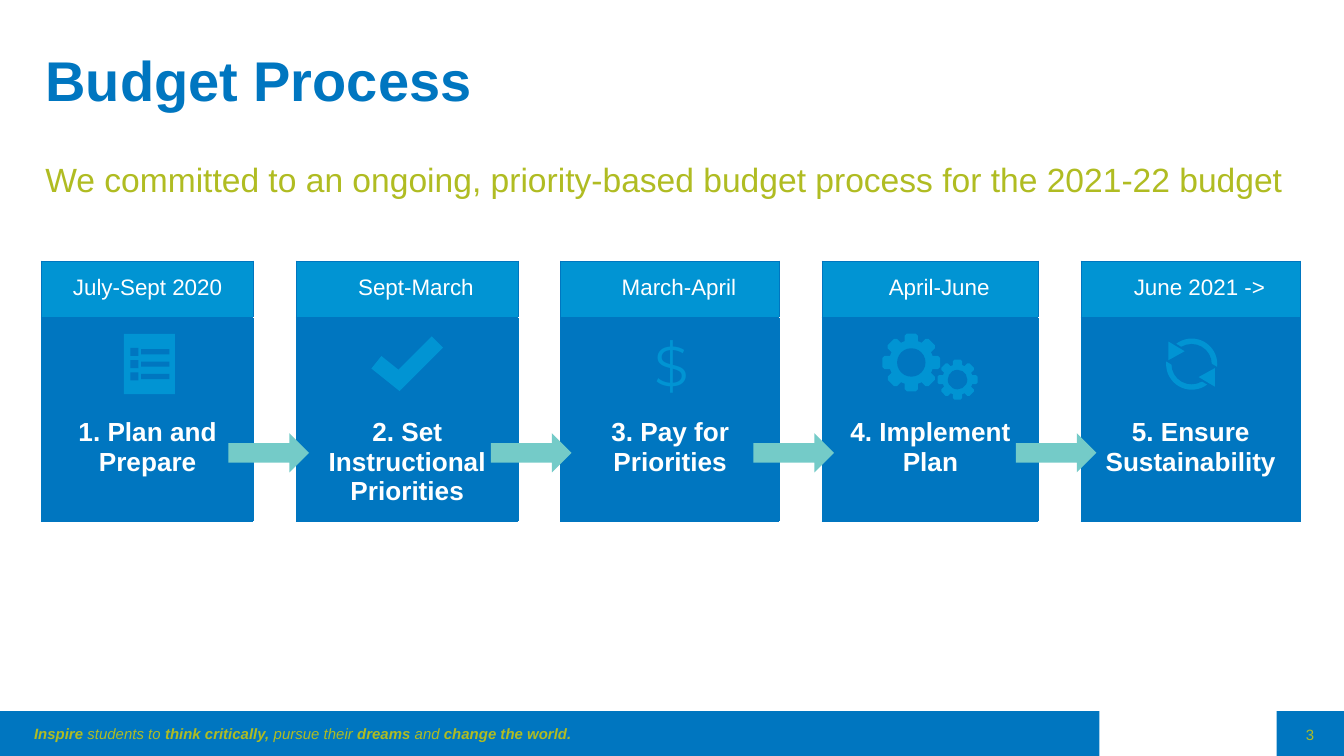
from lxml import etree
from math import cos, radians, sin

from pptx import Presentation
from pptx.dml.color import RGBColor
from pptx.enum.shapes import MSO_SHAPE as Shape
from pptx.enum.text import MSO_ANCHOR as Anchor, MSO_AUTO_SIZE as AutoSize, PP_ALIGN as Align
from pptx.oxml import parse_xml
from pptx.oxml.ns import nsdecls
from pptx.util import Pt

BLUE = RGBColor(0x00, 0x76, 0xC0)
SKY = RGBColor(0x01, 0x94, 0xD3)
LIME = RGBColor(0xB0, 0xBC, 0x22)
TEAL = RGBColor(0x74, 0xCB, 0xC8)
WHITE = RGBColor(0xFF, 0xFF, 0xFF)
INSET = 7.2


def add_shape(shapes, kind, x, y, w, h, color, rotation=0):
    """Add a borderless filled shape centred on x, y."""
    sp = shapes.add_shape(kind, Pt(x - w / 2), Pt(y - h / 2), Pt(w), Pt(h))
    sp.shadow.inherit = False
    sp.fill.solid()
    sp.fill.fore_color.rgb = color
    sp.line.fill.background()
    sp.rotation = rotation
    return sp


def format_text(sp, box, size, color, font="Arial", anchor=Anchor.TOP, align=Align.LEFT):
    """Place a text shape and set its frame and paragraph format."""
    sp.left, sp.top, sp.width, sp.height = (Pt(v) for v in box)
    tf = sp.text_frame
    tf.word_wrap = True
    tf.auto_size = AutoSize.NONE
    tf.vertical_anchor = anchor
    tf.margin_left = tf.margin_right = tf.margin_top = tf.margin_bottom = Pt(INSET)
    p = tf.paragraphs[0]
    p.alignment = align
    p.font.size = Pt(size)
    p.font.name = font
    p.font.color.rgb = color
    return p


prs = Presentation()
prs.slide_width, prs.slide_height = Pt(720), Pt(405)
s = prs.slides.add_slide(prs.slide_layouts[5])
shapes = s.shapes

# Footer
add_shape(shapes, Shape.RECTANGLE, 360, 393, 720, 24, BLUE)
add_shape(shapes, Shape.RECTANGLE, 636.5, 380, 95, 50, WHITE)
sp = shapes.add_textbox(0, 0, 0, 0)
p = format_text(sp, (11.2, 381, 335.5, 18), 8, LIME)
p.font.italic = True
for text, bold in [("Inspire", True), (" students to ", False), ("think critically,", True),
                   (" pursue their ", False), ("dreams", True), (" and ", False),
                   ("change the world.", True)]:
    r = p.add_run()
    r.text = text
    r.font.bold = bold
sp = shapes.add_textbox(0, 0, 0, 0)
sp.text_frame.text = "3"
format_text(sp, (692.5, 382.5, 27.5, 21.6), 8, LIME, anchor=Anchor.MIDDLE)

# Title and subtitle
shapes.title.text_frame.text = "Budget Process"
p = format_text(shapes.title, (17.2, 17.2, 684, 43.2), 30, BLUE)
p.font.bold = True
sp = shapes.add_textbox(0, 0, 0, 0)
sp.text_frame.text = "We committed to an ongoing, priority-based budget process for the 2021-22 budget"
format_text(sp, (17.2, 77.8, 684, 30.2), 18, LIME)

# Timeline table: phase columns separated by empty gap columns
phases = [
    ("July-Sept 2020", "1. Plan and\nPrepare", 113.8),
    ("Sept-March", "2. Set Instructional Priorities", 118.8),
    ("March-April", "3. Pay for\nPriorities", 117.4),
    ("April-June", "4. Implement\vPlan", 115.9),
    ("June 2021 ->", "5. Ensure\vSustainability", 117.4),
]
GAP = 22.8
n_cols = 2 * len(phases) - 1
table_width = sum(width for *_, width in phases) + GAP * (len(phases) - 1)
table = shapes.add_table(2, n_cols, Pt(22.2), Pt(140), Pt(table_width), Pt(139.4)).table
table.first_row = table.horz_banding = False
table.rows[0].height, table.rows[1].height = Pt(30), Pt(109.4)

for col in range(n_cols):
    is_gap = col % 2 == 1
    date, step, width = phases[col // 2]
    table.columns[col].width = Pt(GAP if is_gap else width)
    for row, text, size, fill in [(0, date, 12, SKY), (1, step, 14, BLUE)]:
        cell = table.cell(row, col)
        tc_pr = cell._tc.get_or_add_tcPr()
        for side in "LR" if is_gap else "LRTB":
            tc_pr.append(parse_xml(
                f'<a:ln{side} {nsdecls("a")} w="9525"><a:solidFill>'
                f'<a:srgbClr val="{BLUE}"/></a:solidFill></a:ln{side}>'))
        if is_gap:
            cell.fill.background()
            continue
        cell.fill.solid()
        cell.fill.fore_color.rgb = fill
        cell.margin_left = cell.margin_right = cell.margin_bottom = Pt(INSET)
        cell.margin_top = Pt(54 if row else INSET)  # steps sit below the icons
        cell.text_frame.text = text
        for p in cell.text_frame.paragraphs:
            p.alignment = Align.CENTER
            p.font.size = Pt(size)
            p.font.name = "Arial"
            p.font.bold = row == 1
            p.font.color.rgb = WHITE
            if row == 0 and col > 0:
                p_pr = p._p.get_or_add_pPr()
                p_pr.set("marL", str(Pt(13.7)))
                p_pr.set("indent", str(-Pt(4.3)))

# Arrows between phases
for i in range(len(phases) - 1):
    add_shape(shapes, Shape.RIGHT_ARROW, 144 + 140.6 * i, 242.6, 43.2, 21, TEAL)

# Checklist icon
add_shape(shapes, Shape.RECTANGLE, 80, 195, 27.4, 32.4, SKY)
for i in range(3):
    y = 188.5 + 6.6 * i
    add_shape(shapes, Shape.RECTANGLE, 72, y, 4.3, 4.3, BLUE)
    add_shape(shapes, Shape.RECTANGLE, 83.2, y, 15.1, 2.8, BLUE)

# Check mark icon
check = shapes.add_group_shape().shapes
add_shape(check, Shape.RECTANGLE, 209.2, 200.2, 19.4, 8.6, SKY, 38.7)
add_shape(check, Shape.RECTANGLE, 223.2, 194.4, 31.7, 8.6, SKY, 315)

# Dollar icon
sp = shapes.add_textbox(0, 0, 0, 0)
sp.text_frame.text = "$"
format_text(sp, (301, 170, 117.4, 43.2), 30, SKY, "Montserrat", align=Align.CENTER)

# Gear icons
for x, y, body in [(488.2, 194.2, 23.8), (513, 203.4, 16.4)]:
    gear = shapes.add_group_shape().shapes
    add_shape(gear, Shape.OVAL, x, y, body, body, SKY)
    for angle in range(0, 360, 45):
        a = radians(angle)
        add_shape(gear, Shape.SNIP_2_SAME_RECTANGLE, x + body / 2 * sin(a),
                  y - body / 2 * cos(a), body * 0.3, body * 0.3, SKY, angle)
    add_shape(gear, Shape.OVAL, x, y, body * 0.64, body * 0.64, BLUE)

# Cycle icon: a ring cut twice, with an arrowhead in each cut
x, y = 638.4, 195.1
add_shape(shapes, Shape.OVAL, x, y, 27.4, 27.4, SKY)
add_shape(shapes, Shape.OVAL, x, y, 21.6, 21.6, BLUE)
for side, turn in [(-1, 210.7), (1, 30.7)]:
    cut_x, cut_y = x + 10.3 * side, y + 5.8 * side
    add_shape(shapes, Shape.RECTANGLE, cut_x, cut_y, 11.5, 10.8, BLUE, turn)
    add_shape(shapes, Shape.ISOSCELES_TRIANGLE, cut_x, cut_y, 10.1, 8.6, SKY, turn)

prs.save("out.pptx")
